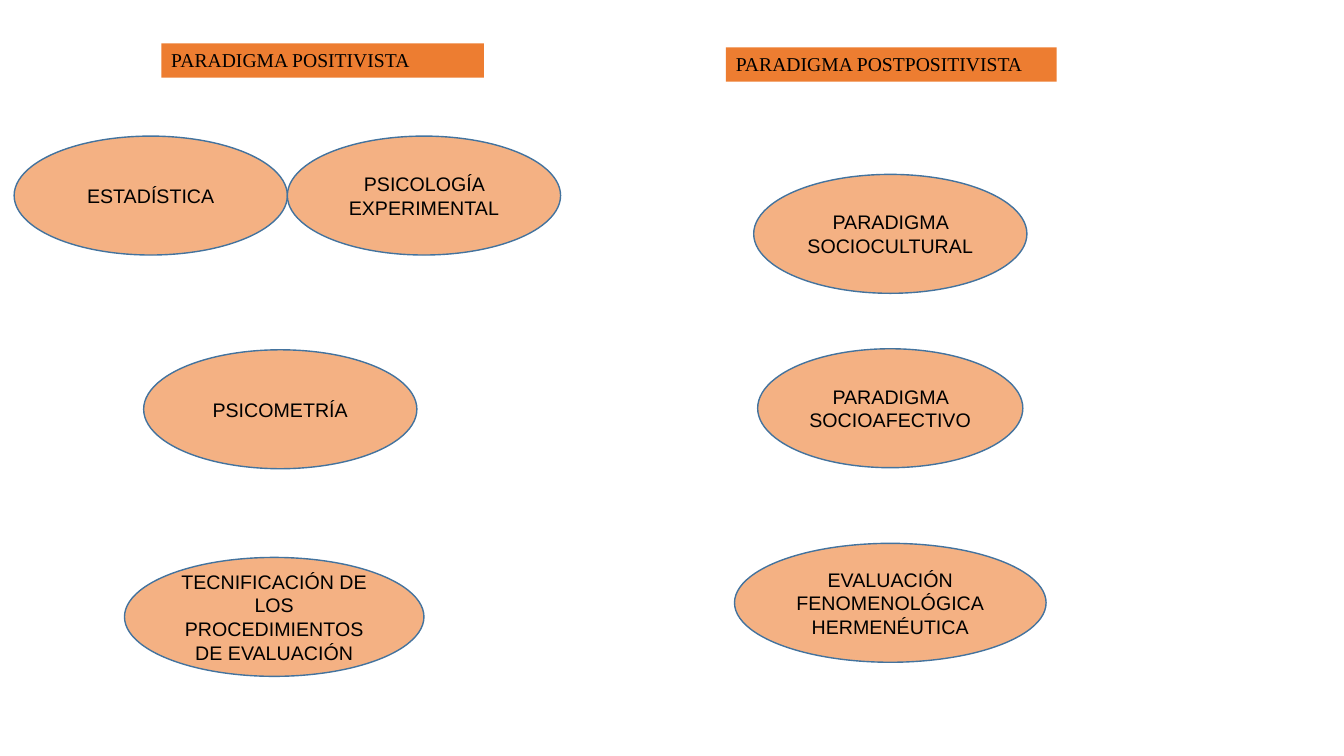
import pptx
import pptx.dml.color
import pptx.enum.shapes
import pptx.enum.text
import pptx.util

Inches = pptx.util.Inches
Pt = pptx.util.Pt

ELLIPSE_HEIGHT = 1.18
ELLIPSE_WIDTH = 2.71
POSITIVIST_TOP = 1.35
POSITIVIST_LEFT = 0.14
POSTPOSITIVIST_CENTER = 8.83


def color(hex_value):
    return pptx.dml.color.RGBColor.from_string(hex_value)


def write(frame, lines, font_name, alignment):
    """Fill a text frame with one paragraph per line."""
    frame.word_wrap = True
    for index, line in enumerate(lines):
        paragraph = frame.add_paragraph() if index else frame.paragraphs[0]
        paragraph.text = line
        paragraph.alignment = alignment
        paragraph.font.name = font_name
        paragraph.font.size = Pt(14)
        paragraph.font.color.rgb = color("000000")


presentation = pptx.Presentation()
presentation.slide_width = Inches(13.33)
presentation.slide_height = Inches(7.5)
slide = presentation.slides.add_slide(presentation.slide_layouts[6])

# Headings: text, left, top, width
headings = [
    ("PARADIGMA POSITIVISTA", 1.6, 0.43, 3.2),
    ("PARADIGMA POSTPOSITIVISTA", 7.2, 0.47, 3.28),
]
for text, left, top, width in headings:
    heading = slide.shapes.add_textbox(
        Inches(left), Inches(top), Inches(width), Inches(0.34))
    heading.fill.solid()
    heading.fill.fore_color.rgb = color("ED7D31")
    heading.text_frame.auto_size = pptx.enum.text.MSO_AUTO_SIZE.SHAPE_TO_FIT_TEXT
    write(heading.text_frame, [text], "Times New Roman",
          pptx.enum.text.PP_ALIGN.LEFT)

# Concepts: lines, horizontal center, top, width
first_center = POSITIVIST_LEFT + ELLIPSE_WIDTH / 2
concepts = [
    (["ESTADÍSTICA"], first_center, POSITIVIST_TOP, ELLIPSE_WIDTH),
    (["PSICOLOGÍA EXPERIMENTAL"], first_center + ELLIPSE_WIDTH,
     POSITIVIST_TOP, ELLIPSE_WIDTH),
    (["PSICOMETRÍA"], 2.78, 3.47, ELLIPSE_WIDTH),
    (["TECNIFICACIÓN DE LOS PROCEDIMIENTOS DE EVALUACIÓN"], 2.72, 5.53, 2.97),
    (["PARADIGMA SOCIOCULTURAL"], POSTPOSITIVIST_CENTER, 1.73, ELLIPSE_WIDTH),
    (["PARADIGMA SOCIOAFECTIVO"], POSTPOSITIVIST_CENTER, 3.46, 2.63),
    (["EVALUACIÓN FENOMENOLÓGICA", "HERMENÉUTICA"],
     POSTPOSITIVIST_CENTER, 5.39, 3.09),
]
for lines, center, top, width in concepts:
    concept = slide.shapes.add_shape(
        pptx.enum.shapes.MSO_SHAPE.OVAL,
        Inches(center - width / 2), Inches(top),
        Inches(width), Inches(ELLIPSE_HEIGHT))
    concept.shadow.inherit = False
    concept.fill.solid()
    concept.fill.fore_color.rgb = color("F4B183")
    concept.line.color.rgb = color("43739E")
    concept.line.width = Pt(1)
    concept.text_frame.vertical_anchor = pptx.enum.text.MSO_ANCHOR.MIDDLE
    write(concept.text_frame, lines, "Arial", pptx.enum.text.PP_ALIGN.CENTER)

presentation.save("out.pptx")
